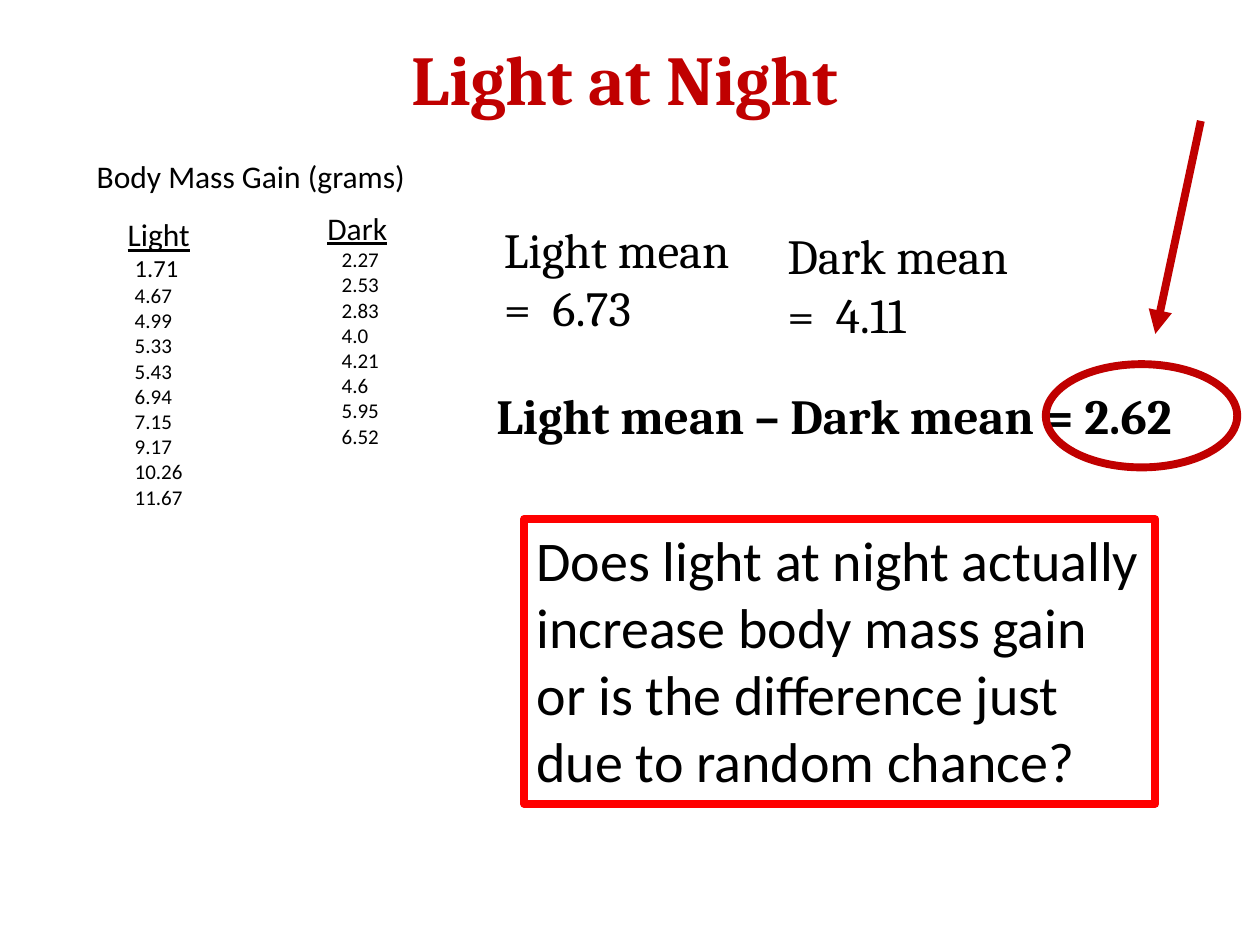
"""Build the Light at Night slide comparing body mass gain in two groups."""
from lxml.etree import SubElement
from pptx import Presentation
from pptx.dml.color import RGBColor
from pptx.enum.shapes import MSO_CONNECTOR, MSO_SHAPE
from pptx.enum.text import MSO_ANCHOR as Anchor, PP_ALIGN as Align
from pptx.oxml.ns import qn
from pptx.util import Pt

COLORS = {"title": "C00000", "mark": "C00000", "frame": "FF0000", "text": "000000"}
TITLE = {"name": "Cambria", "size": Pt(40), "bold": True}
MEAN = {"name": "Cambria", "size": Pt(28)}
RESULT = {**MEAN, "bold": True}
QUESTION = {"name": "Calibri", "size": Pt(32)}
LABEL = {"name": "Calibri", "size": Pt(18)}
HEADER = {**LABEL, "underline": True}
VALUE = {"name": "Calibri", "size": Pt(12)}
FIRST_VALUE = {**VALUE, "size": Pt(14)}

TEXTS = [
    ((280.8, 121.7, 157, 75), ["Light mean =  6.73"], MEAN),
    ((442.8, 125.3, 167.8, 75), ["Dark mean", "=  4.11"], MEAN),
    ((276.5, 216.7, 440.6, 41), ["Light mean – Dark mean = 2.62"], RESULT),
    ((48.2, 86.4, 221, 36), ["Body Mass Gain (grams)"], LABEL),
]
GROUPS = [
    {"name": "Dark", "area": (180, 115.9, 72, 160), "indents": (0, 8.2), "first": VALUE,
     "values": ["2.27", "2.53", "2.83", "4.0", "4.21", "4.6", "5.95", "6.52"]},
    {"name": "Light", "area": (53.3, 119.5, 85, 206), "indents": (12.6, 16.6), "first": FIRST_VALUE,
     "values": ["1.71", "4.67", "4.99", "5.33", "5.43", "6.94", "7.15", "9.17", "10.26", "11.67"]},
]
QUESTION_TEXT = ("Does light at night actually increase body mass gain "
                 "or is the difference just due to random chance?")
QUESTION_AREA = (299.5, 296.6, 360.7, 162.7)
RESULT_RING = (597.6, 208.1, 109.4, 59)
ARROW = (686.2, 69.1, 660.2, 190.8)


def points(values):
    return [Pt(value) for value in values]


def write(box, rows, color="text", align=Align.LEFT, anchor=Anchor.TOP):
    frame = box.text_frame
    frame.word_wrap = True
    frame.vertical_anchor = anchor
    for number, (text, style, indent) in enumerate(rows):
        para = frame.paragraphs[0] if number == 0 else frame.add_paragraph()
        para.alignment = align
        if indent:
            para._p.get_or_add_pPr().set("marL", str(Pt(indent)))
        span = para.add_run()
        span.text = text
        for key, value in style.items():
            setattr(span.font, key, value)
        span.font.color.rgb = RGBColor.from_string(COLORS[color])


def add_text(slide, area, rows, **options):
    write(slide.shapes.add_textbox(*points(area)), rows, **options)


def draw_line(line, color):
    line.color.rgb = RGBColor.from_string(COLORS[color])
    line.width = Pt(4.5)


def add_outline(slide, kind, area, color):
    shape = slide.shapes.add_shape(kind, *points(area))
    shape.shadow.inherit = False
    shape.fill.background()
    draw_line(shape.line, color)
    return shape


def add_arrow(slide, ends):
    arrow = slide.shapes.add_connector(MSO_CONNECTOR.STRAIGHT, *points(ends))
    draw_line(arrow.line, "mark")
    SubElement(arrow.line._get_or_add_ln(), qn("a:tailEnd"), type="triangle")
    SubElement(arrow._element.spPr, qn("a:effectLst"))


def main():
    deck = Presentation()
    deck.slide_width, deck.slide_height = Pt(720), Pt(540)
    page = deck.slides.add_slide(deck.slide_layouts[6])
    add_text(page, (36, 10.1, 642.2, 68.4), [("Light at Night", TITLE, 0)],
             color="title", align=Align.CENTER, anchor=Anchor.MIDDLE)
    for area, lines, style in TEXTS:
        add_text(page, area, [(line, style, 0) for line in lines])
    question = add_outline(page, MSO_SHAPE.RECTANGLE, QUESTION_AREA, "frame")
    write(question, [(QUESTION_TEXT, QUESTION, 0)])
    for group in GROUPS:
        header_indent, value_indent = group["indents"]
        first, *others = group["values"]
        rows = [(group["name"], HEADER, header_indent), (first, group["first"], value_indent)]
        rows += [(value, VALUE, value_indent) for value in others]
        add_text(page, group["area"], rows)
    add_arrow(page, ARROW)
    add_outline(page, MSO_SHAPE.OVAL, RESULT_RING, "mark")
    deck.save("out.pptx")


if __name__ == "__main__":
    main()
